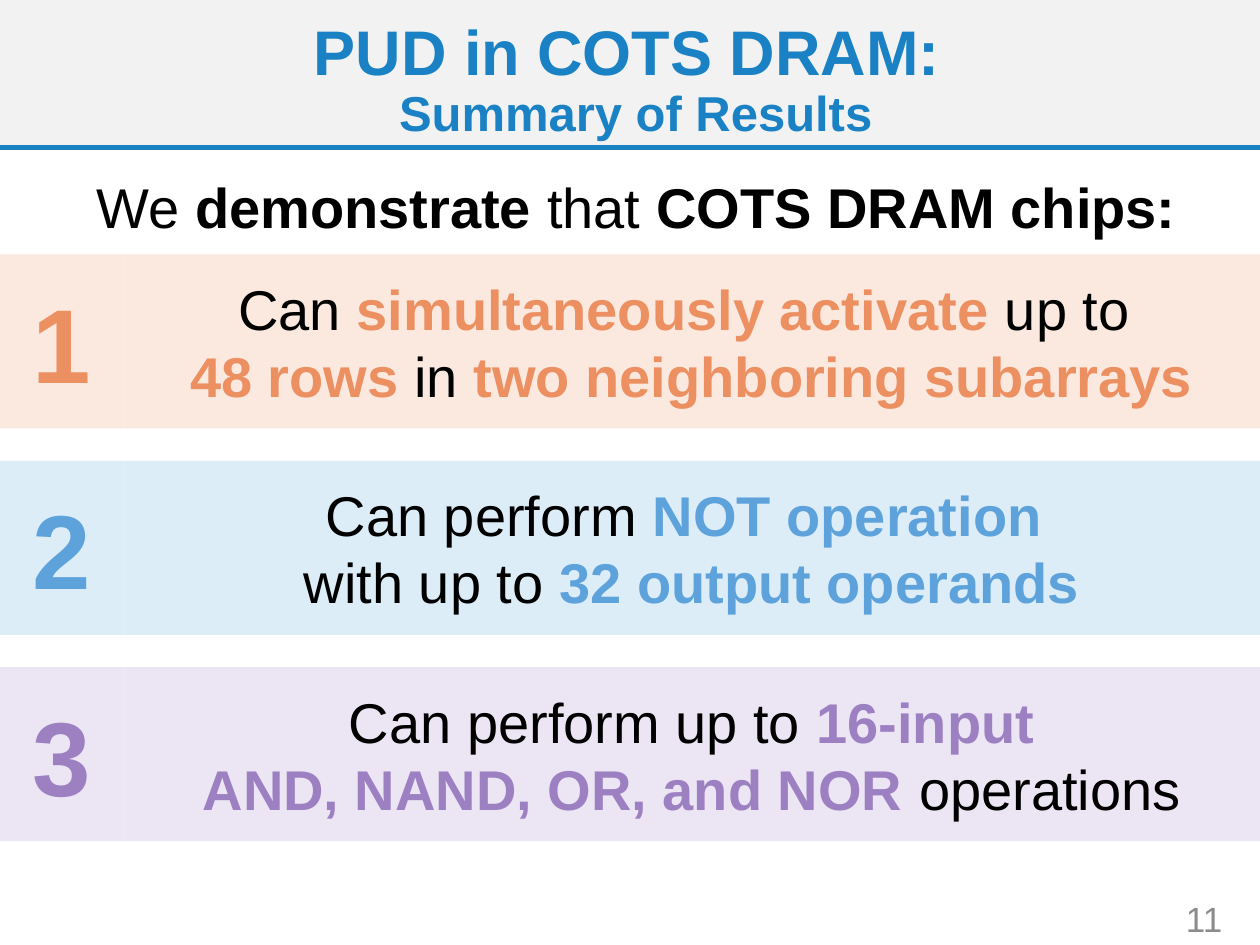
"""Build the summary slide on processing using DRAM in COTS chips."""
from lxml import etree
from pptx import Presentation
from pptx.dml.color import RGBColor
from pptx.enum.shapes import MSO_CONNECTOR, MSO_SHAPE
from pptx.enum.text import MSO_ANCHOR, PP_ALIGN
from pptx.oxml.ns import qn
from pptx.util import Cm, Pt

RECTANGLE = MSO_SHAPE.RECTANGLE
STRAIGHT = MSO_CONNECTOR.STRAIGHT
MIDDLE = MSO_ANCHOR.MIDDLE
CENTER = PP_ALIGN.CENTER
RIGHT = PP_ALIGN.RIGHT

BLACK = RGBColor(0x00, 0x00, 0x00)
GREY = RGBColor(0x8C, 0x8C, 0x8C)
HEADER_GREY = RGBColor(0xF2, 0xF2, 0xF2)
RULE_BLUE = RGBColor(0x19, 0x82, 0xC3)
TITLE_BLUE = RGBColor(0x1A, 0x82, 0xC4)
ORANGE = RGBColor(0xEC, 0x8F, 0x61)
PALE_ORANGE = RGBColor(0xFB, 0xE9, 0xDF)
BLUE = RGBColor(0x5D, 0xA2, 0xDB)
PALE_BLUE = RGBColor(0xDD, 0xED, 0xF8)
PURPLE = RGBColor(0x9C, 0x80, 0xC2)
PALE_PURPLE = RGBColor(0xEC, 0xE5, 0xF3)

SLIDE_WIDTH = Cm(25.4)
HEADER_HEIGHT = Cm(2.97)
ROW_TOP = Cm(5.13)
ROW_PITCH = Cm(4.16)
ROW_HEIGHT = Cm(3.51)
NUMBER_WIDTH = Cm(2.49)


def write(box, lines, size=32, color=BLACK, accent=BLACK, align=CENTER, spacing=1.0):
    """Fill a box with lines of (text, is_accent[, size]) spans; a final newline breaks the line."""
    frame = box.text_frame
    frame.word_wrap = True
    frame.vertical_anchor = MIDDLE
    for index, spans in enumerate(lines):
        para = frame.paragraphs[0] if index == 0 else frame.add_paragraph()
        para.alignment = align
        para.line_spacing = spacing
        for text, is_accent, *own_size in spans:
            span = para.add_run()
            span.text = text.rstrip("\n")
            span.font.name = "Arial"
            span.font.size = Pt(own_size[0] if own_size else size)
            span.font.bold = is_accent
            span.font.color.rgb = accent if is_accent else color
            if text.endswith("\n"):
                para.add_line_break()


def add_band(shapes, left, top, width, height, fill):
    """Add a plain filled rectangle."""
    band = shapes.add_shape(RECTANGLE, left, top, width, height)
    band.shadow.inherit = False
    band.fill.solid()
    band.fill.fore_color.rgb = fill
    band.line.fill.background()
    return band


deck = Presentation()
deck.slide_width = SLIDE_WIDTH
deck.slide_height = Cm(19.05)
page = deck.slides.add_slide(deck.slide_layouts[6])

add_band(page.shapes, 0, 0, SLIDE_WIDTH, HEADER_HEIGHT, HEADER_GREY)
page_number = page.shapes.add_textbox(Cm(22.15), Cm(18.01), Cm(2.74), Cm(1.02))
write(page_number, [[("11", False)]], size=20, color=GREY, align=RIGHT)

rule = page.shapes.add_connector(STRAIGHT, 0, HEADER_HEIGHT, SLIDE_WIDTH, HEADER_HEIGHT)
rule.line.color.rgb = RULE_BLUE
rule.line.width = Pt(3)
etree.SubElement(rule._element.spPr, qn("a:effectLst"))

intro = page.shapes.add_textbox(Cm(0.13), Cm(2.95), SLIDE_WIDTH, Cm(2.59))
write(
    intro,
    [[("We ", False), ("demonstrate ", True), ("that", False), (" COTS DRAM chips:", True)]],
    spacing=0.9,
)

results = [
    (PALE_ORANGE, ORANGE, [
        [("Can ", False), ("simultaneously activate ", True), ("up to ", False)],
        [("48 rows ", True), ("in ", False), ("two neighboring subarrays", True)],
    ]),
    (PALE_BLUE, BLUE, [
        [("Can perform ", False), ("NOT operation ", True)],
        [("with up to ", False), ("32 output operands", True)],
    ]),
    (PALE_PURPLE, PURPLE, [
        [("Can perform up to ", False), ("16-input", True)],
        [("AND, NAND, OR, and NOR ", True), ("operations", False)],
    ]),
]
for row, (fill, accent, lines) in enumerate(results):
    top = ROW_TOP + row * ROW_PITCH
    group = page.shapes.add_group_shape()
    statement = add_band(
        group.shapes, NUMBER_WIDTH, top, SLIDE_WIDTH - NUMBER_WIDTH, ROW_HEIGHT, fill
    )
    write(statement, lines, accent=accent)
    number = add_band(group.shapes, 0, top, NUMBER_WIDTH, ROW_HEIGHT, fill)
    write(number, [[(str(row + 1), True)]], size=60, accent=accent)

title = page.shapes.add_textbox(Cm(0.46), Cm(0.36), Cm(24.71), Cm(2.57))
write(
    title,
    [[("PUD in COTS DRAM: \n", True), ("Summary of Results", True, 28)]],
    size=36,
    accent=TITLE_BLUE,
    spacing=0.9,
)

deck.save("out.pptx")
